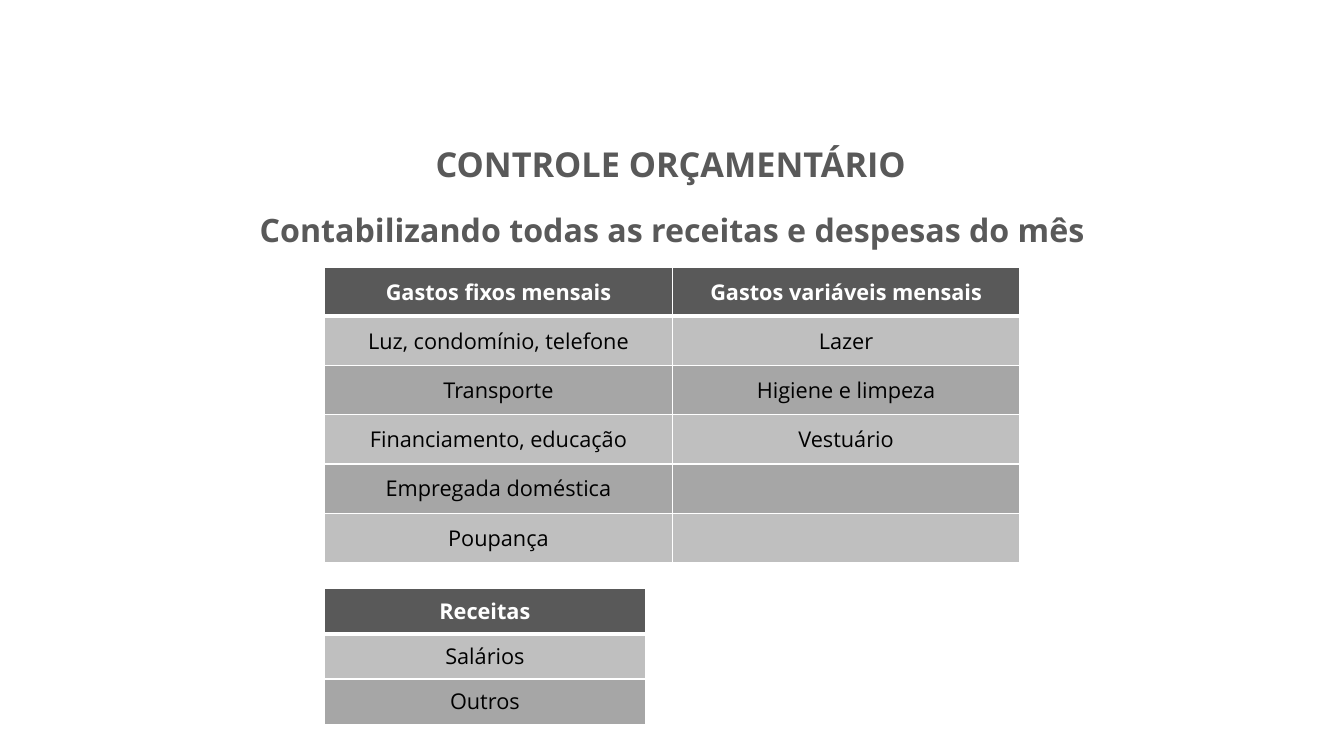
"""Build the monthly budget control slide."""
from lxml import etree
from pptx import Presentation, util as u
from pptx.dml.color import RGBColor
from pptx.enum import text as t
from pptx.oxml import ns

DARK = RGBColor(0x59, 0x59, 0x59)
LIGHT = RGBColor(0xBF, 0xBF, 0xBF)
MID = RGBColor(0xA6, 0xA6, 0xA6)
WHITE = RGBColor(0xFF, 0xFF, 0xFF)
BLACK = RGBColor(0, 0, 0)


def style(par, size, color, bold):
    par.alignment = t.PP_ALIGN.CENTER
    for item in [par, *par.runs]:
        font = item.font
        font.name, font.size, font.bold = "Open Sans", u.Pt(size), bold
        font.color.rgb = color


def border(cell, widths):
    props = cell._tc.get_or_add_tcPr()
    for spot, (side, width) in enumerate(widths.items()):
        line = etree.Element(ns.qn("a:ln" + side), w=str(u.Pt(width)))
        fill = etree.SubElement(line, ns.qn("a:solidFill"))
        etree.SubElement(fill, ns.qn("a:srgbClr"), val=str(WHITE))
        props.insert(spot, line)


deck = Presentation()
deck.slide_width, deck.slide_height = u.Cm(33.87), u.Cm(19.05)
slide = deck.slides.add_slide(deck.slide_layouts[0])

heads = [
    ("CONTROLE ORÇAMENTÁRIO", 24.5, (10.62, 3.48, 12.57, 1.3)),
    ("Contabilizando todas as receitas e despesas do mês", 23,
     (5.44, 5.16, 23.04, 1.24)),
]
for holder, (words, size, place) in zip(slide.placeholders, heads):
    holder.left, holder.top, holder.width, holder.height = map(u.Cm, place)
    frame = holder.text_frame
    frame.text = words
    frame.auto_size = t.MSO_AUTO_SIZE.NONE
    frame.vertical_anchor = t.MSO_ANCHOR.MIDDLE
    par = frame.paragraphs[0]
    par.space_before = u.Pt(0)
    style(par, size, DARK, True)

costs = [
    ("Gastos fixos mensais", "Gastos variáveis mensais"),
    ("Luz, condomínio, telefone", "Lazer"),
    ("Transporte", "Higiene e limpeza"),
    ("Financiamento, educação", "Vestuário"),
    ("Empregada doméstica", ""),
    ("Poupança", ""),
]
income = [("Receitas",), ("Salários",), ("Outros",)]

for rows, top, width, height in [(costs, 6.73, 8.76, 1.24),
                                 (income, 14.83, 8.08, 1.14)]:
    cols = len(rows[0])
    grid = slide.shapes.add_table(
        len(rows), cols, u.Cm(8.18), u.Cm(top),
        u.Cm(width * cols), u.Cm(height * len(rows))).table
    for col in grid.columns:
        col.width = u.Cm(width)
    for r, row in enumerate(rows):
        grid.rows[r].height = u.Cm(height)
        for c, words in enumerate(row):
            cell = grid.cell(r, c)
            cell.text = words
            cell.vertical_anchor = t.MSO_ANCHOR.MIDDLE
            cell.margin_left = cell.margin_right = u.Cm(0.23)
            cell.margin_top = cell.margin_bottom = u.Cm(0.1)
            cell.fill.solid()
            cell.fill.fore_color.rgb = DARK if r == 0 else (MID, LIGHT)[r % 2]
            style(cell.text_frame.paragraphs[0], 15.5,
                  BLACK if r else WHITE, r == 0)
            border(cell, {"L": 1, "R": 1, "T": 3 if r == 1 else 1,
                          "B": 1 if r else 3})

deck.save("out.pptx")
